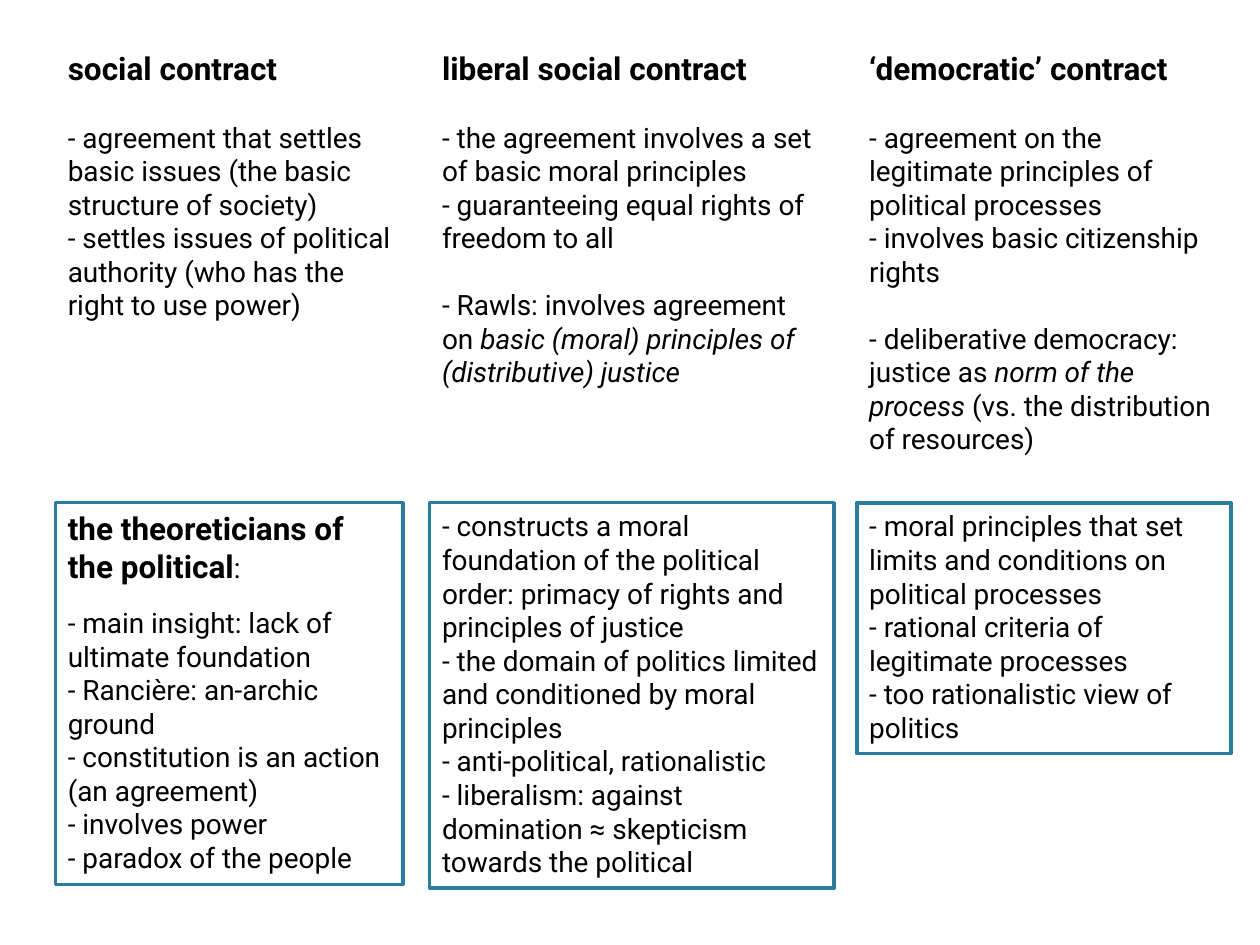
from dataclasses import dataclass

from pptx import Presentation
from pptx.dml.color import RGBColor
from pptx.enum.shapes import MSO_SHAPE
from pptx.enum.text import MSO_ANCHOR, MSO_AUTO_SIZE, PP_ALIGN
from pptx.util import Inches, Pt


@dataclass(frozen=True)
class Theme:
    font: str = "Roboto"
    text: RGBColor = RGBColor(0x00, 0x00, 0x00)
    fill: RGBColor = RGBColor(0xFF, 0xFF, 0xFF)
    border: RGBColor = RGBColor(0x2C, 0x7C, 0x9F)
    border_width: Pt = Pt(2)
    heading: Pt = Pt(18)
    body: Pt = Pt(16)
    wide_gap: Pt = Pt(19)
    small_gap: Pt = Pt(12)


THEME = Theme()
HEADING, BODY = "heading", "body"
CONTRACT_TOP, CRITIQUE_TOP = 0.34, 3.99

# Column: left, width, contract height, contract text, critique height, critique text.
# Paragraph: kind, space before, text; *asterisks* mark italics in the body
# and the part of a heading that is set as body text.
COLUMNS = [
    (0.44, 2.76, 2.56, [
        (HEADING, 0, "social contract"),
        (BODY, THEME.wide_gap, "- agreement that settles basic issues (the basic structure of society)"),
        (BODY, 0, "- settles issues of political authority (who has the right to use power)"),
    ], 3.03, [
        (HEADING, 0, "the theoreticians of the political*:*"),
        (BODY, THEME.small_gap, "- main insight: lack of ultimate foundation"),
        (BODY, 0, "- Rancière: an-archic ground"),
        (BODY, 0, "- constitution is an action (an agreement)"),
        (BODY, 0, "- involves power"),
        (BODY, 0, "- paradox of the people"),
    ]),
    (3.41, 3.21, 3.1, [
        (HEADING, 0, "liberal social contract"),
        (BODY, THEME.wide_gap, "- the agreement involves a set of basic moral principles"),
        (BODY, 0, "- guaranteeing equal rights of freedom to all"),
        (BODY, THEME.wide_gap,
         "- Rawls: involves agreement on *basic (moral) principles of (distributive) justice*"),
    ], 3.06, [
        (BODY, 0, "- constructs a moral foundation of the political order: "
                  "primacy of rights and principles of justice"),
        (BODY, 0, "- the domain of politics limited and conditioned by moral principles"),
        (BODY, 0, "- anti-political, rationalistic"),
        (BODY, 0, "- liberalism: against domination ≈ skepticism towards the political"),
    ]),
    (6.8, 2.97, 3.37, [
        (HEADING, 0, "‘democratic’ contract"),
        (BODY, THEME.wide_gap, "- agreement on the legitimate principles of political processes"),
        (BODY, 0, "- involves basic citizenship rights"),
        (BODY, THEME.wide_gap,
         "- deliberative democracy: justice as *norm of the process* (vs. the distribution of resources)"),
    ], 1.99, [
        (BODY, 0, "- moral principles that set limits and conditions on political processes"),
        (BODY, 0, "- rational criteria of legitimate processes"),
        (BODY, 0, "- too rationalistic view of politics"),
    ]),
]


def write_text(box, paragraphs):
    frame = box.text_frame
    frame.word_wrap = True
    frame.auto_size = MSO_AUTO_SIZE.SHAPE_TO_FIT_TEXT
    frame.vertical_anchor = MSO_ANCHOR.TOP
    for index, (kind, gap, text) in enumerate(paragraphs):
        para = frame.add_paragraph() if index else frame.paragraphs[0]
        para.alignment = PP_ALIGN.LEFT
        para.space_before = gap
        para.font.name = THEME.font
        para.font.color.rgb = THEME.text
        para.font.size = THEME.heading if kind == HEADING else THEME.body
        para.font.bold = kind == HEADING
        for position, part in enumerate(text.split("*")):
            if not part:
                continue
            span = para.add_run()
            span.text = part
            if position % 2 and kind == HEADING:
                span.font.size = THEME.body
                span.font.bold = False
            elif position % 2:
                span.font.italic = True


deck = Presentation()
deck.slide_width = Inches(10)
deck.slide_height = Inches(7.5)
page = deck.slides.add_slide(deck.slide_layouts[6])

for left, width, contract_height, contract, critique_height, critique in COLUMNS:
    contract_box = page.shapes.add_textbox(
        Inches(left), Inches(CONTRACT_TOP), Inches(width), Inches(contract_height))
    write_text(contract_box, contract)

    critique_box = page.shapes.add_shape(
        MSO_SHAPE.RECTANGLE,
        Inches(left), Inches(CRITIQUE_TOP), Inches(width), Inches(critique_height))
    critique_box.shadow.inherit = False
    critique_box.fill.solid()
    critique_box.fill.fore_color.rgb = THEME.fill
    critique_box.line.color.rgb = THEME.border
    critique_box.line.width = THEME.border_width
    write_text(critique_box, critique)

deck.save("out.pptx")
